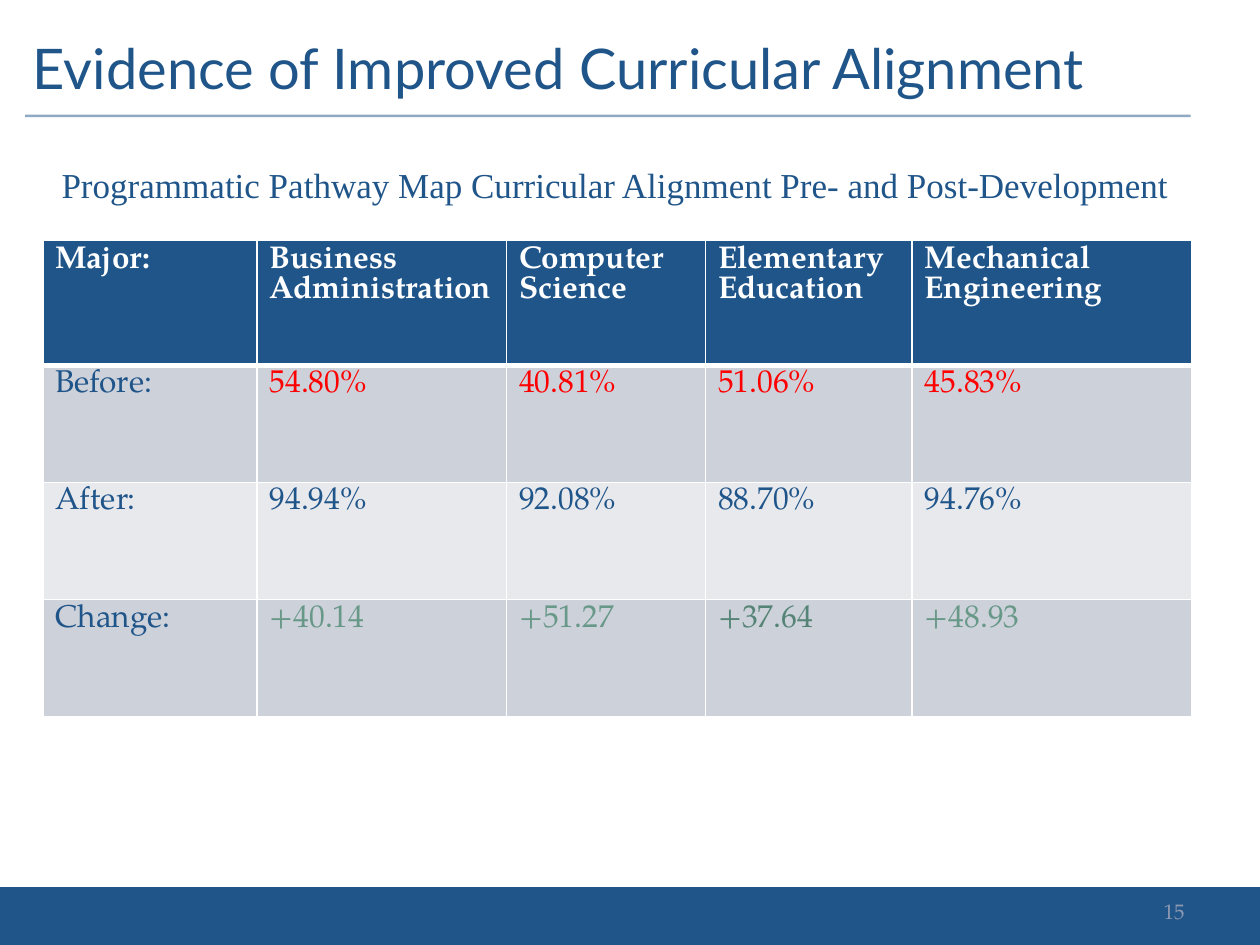
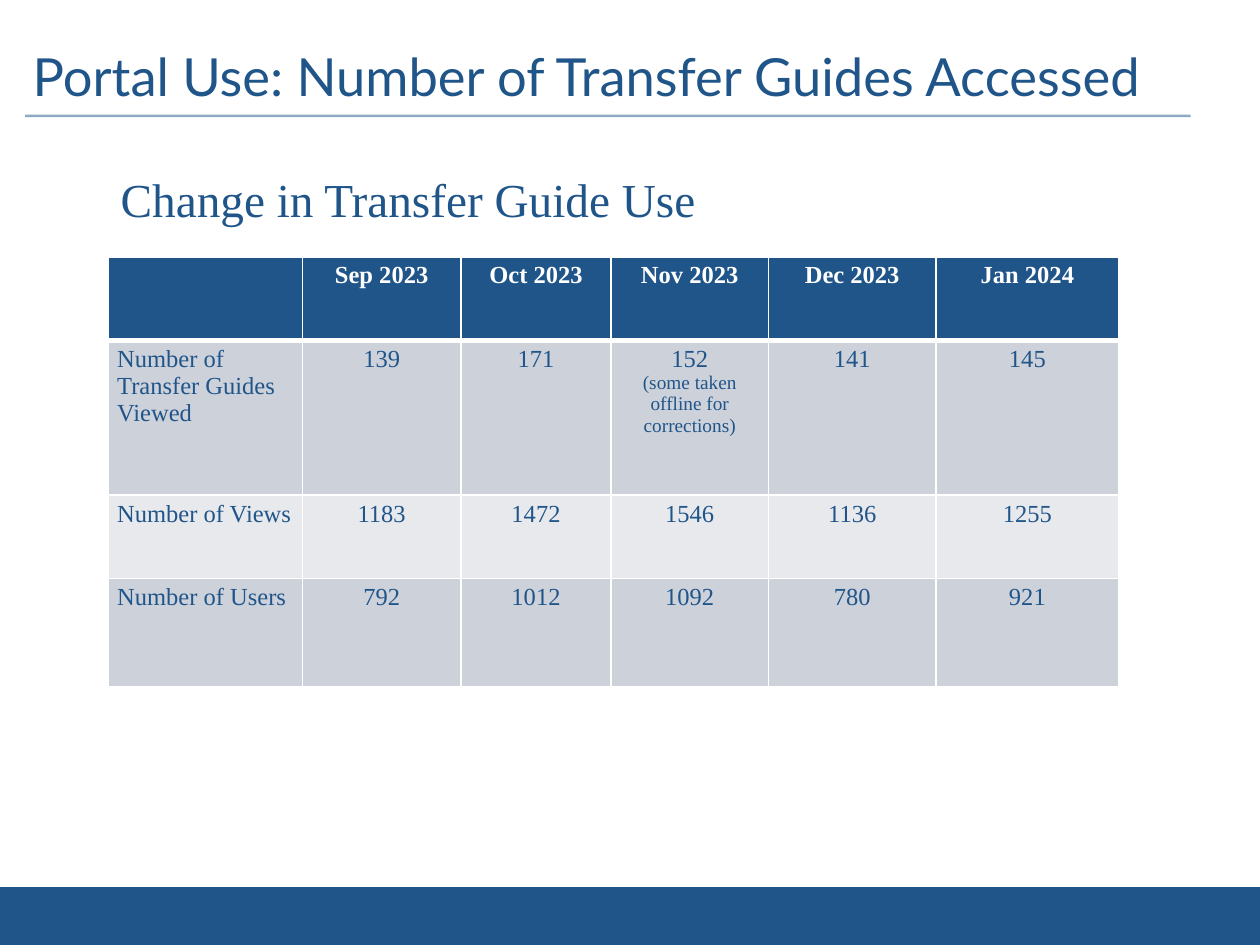
import dataclasses

import pptx
import pptx.dml.color
import pptx.enum.shapes
import pptx.enum.text
import pptx.oxml
import pptx.oxml.ns
import pptx.util

ALIGN = pptx.enum.text.PP_ALIGN
LEFT, MID, RIGHT = ALIGN.LEFT, ALIGN.CENTER, ALIGN.RIGHT

# Slide size and a grid of 100 columns by 75 rows
WIDE, HIGH = pptx.util.Inches(10), pptx.util.Inches(7.5)
COLS, ROWS = 100, 75

# Shared colours and fonts
NAVY, WHITE, GRAY = "20558A", "FFFFFF", "8D99B1"
RED, GREEN, PINE = "FF0000", "689888", "558476"
BANDS = ("CDD1DA", "E8E9ED")
SANS, BOOK, TIMES = "Lato", "TeX Gyre Pagella", "Times New Roman"

Box = tuple[float, float, float, float]
Spot = tuple[int, int]


@dataclasses.dataclass
class Style:
    font: str
    size: float
    hue: str = NAVY
    bold: bool = False
    align: ALIGN = LEFT


@dataclasses.dataclass
class Label:
    text: str
    box: Box
    style: Style


@dataclasses.dataclass
class Chart:
    """A banded table: texts, grid sizes and the cells that stand out."""
    left: float
    top: float
    wides: list[float]
    highs: list[float]
    cells: list[list[str]]
    font: str
    size: float
    align: ALIGN = LEFT
    inset: tuple[float, float] = (1, 0.5)
    pitch: float | None = None
    hues: dict[Spot, str] = dataclasses.field(default_factory=dict)
    notes: dict[Spot, str] = dataclasses.field(default_factory=dict)


@dataclasses.dataclass
class Page:
    title: Label
    lead: Label
    chart: Chart
    number: Label | None = None


def across(n: float) -> int:
    return round(WIDE * n / COLS)


def down(n: float) -> int:
    return round(HIGH * n / ROWS)


def place(box: Box) -> tuple[int, int, int, int]:
    return across(box[0]), down(box[1]), across(box[2]), down(box[3])


def color(code: str) -> pptx.dml.color.RGBColor:
    return pptx.dml.color.RGBColor.from_string(code)


def paint(shape, code: str) -> None:
    shape.fill.solid()
    shape.fill.fore_color.rgb = color(code)


def write(para, text: str, style: Style) -> None:
    para.alignment = style.align
    run = para.add_run()
    run.text = text
    run.font.name = style.font
    run.font.size = pptx.util.Pt(style.size)
    run.font.bold = style.bold
    run.font.color.rgb = color(style.hue)


# Slide parts
def frame(slide) -> None:
    """Bottom band and the rule under the title."""
    band = slide.shapes.add_shape(
        pptx.enum.shapes.MSO_SHAPE.RECTANGLE, *place((0, 70.4, COLS, 4.6)))
    band.shadow.inherit = False
    paint(band, NAVY)
    band.line.fill.background()

    rule = slide.shapes.add_connector(
        pptx.enum.shapes.MSO_CONNECTOR.STRAIGHT,
        across(2), down(9.2), across(94.5), down(9.2))
    rule.line.color.rgb = color(NAVY)
    rule.line.width = pptx.util.Pt(1.5)
    props = rule.element.spPr
    tint = next(props.iter(pptx.oxml.ns.qn("a:srgbClr")))
    tint.append(pptx.oxml.parse_xml(
        f'<a:alpha {pptx.oxml.ns.nsdecls("a")} val="50000"/>'))
    props.append(pptx.oxml.parse_xml(
        f'<a:effectLst {pptx.oxml.ns.nsdecls("a")}/>'))


def head(slide, label: Label) -> None:
    shape = slide.shapes.title
    shape.left, shape.top, shape.width, shape.height = place(label.box)
    fill(shape.text_frame, label, pptx.enum.text.MSO_ANCHOR.MIDDLE)


def note(slide, label: Label, anchor=pptx.enum.text.MSO_ANCHOR.TOP) -> None:
    shape = slide.shapes.add_textbox(*place(label.box))
    fill(shape.text_frame, label, anchor)


def fill(body, label: Label, anchor) -> None:
    body.word_wrap = True
    body.vertical_anchor = anchor
    write(body.paragraphs[0], label.text, label.style)


def edge(cell, top: float, base: float) -> None:
    """White borders, with top and base widths in points."""
    props = cell._tc.get_or_add_tcPr()
    sides = (("lnL", 1), ("lnR", 1), ("lnT", top), ("lnB", base))
    for i, (side, wide) in enumerate(sides):
        props.insert(i, pptx.oxml.parse_xml(
            f'<a:{side} {pptx.oxml.ns.nsdecls("a")} '
            f'w="{pptx.util.Pt(wide)}"><a:solidFill>'
            f'<a:srgbClr val="{WHITE}"/></a:solidFill></a:{side}>'))


def draw(slide, chart: Chart) -> None:
    box = chart.left, chart.top, sum(chart.wides), sum(chart.highs)
    table = slide.shapes.add_table(
        len(chart.highs), len(chart.wides), *place(box)).table
    table.first_row = table.horz_banding = False
    for col, wide in zip(table.columns, chart.wides):
        col.width = across(wide)
    for row, high in zip(table.rows, chart.highs):
        row.height = down(high)

    for r, texts in enumerate(chart.cells):
        for c, text in enumerate(texts):
            cell = table.cell(r, c)
            cell.margin_left = cell.margin_right = across(chart.inset[0])
            cell.margin_top = cell.margin_bottom = down(chart.inset[1])
            paint(cell, BANDS[(r - 1) % 2] if r else NAVY)
            edge(cell, 3 if r == 1 else 1, 1 if r else 3)
            hue = chart.hues.get((r, c), NAVY if r else WHITE)
            style = Style(chart.font, chart.size, hue, r == 0,
                          chart.align if c else LEFT)
            lines = [(line, style) for line in text.split("\n") if line]
            if (r, c) in chart.notes:
                small = dataclasses.replace(style, size=11)
                lines.append((chart.notes[r, c], small))
            body = cell.text_frame
            for i, (line, look) in enumerate(lines):
                para = body.add_paragraph() if i else body.paragraphs[0]
                if chart.pitch:
                    para.line_spacing = pptx.util.Pt(chart.pitch)
                write(para, line, look)


# Slide contents
MAJORS = Chart(
    3.4, 19.1, [17, 19.8, 15.8, 16.4, 22.2], [9.9, 9.3, 9.3, 9.3],
    [["Major:", "Business Administration", "Computer Science",
      "Elementary\nEducation", "Mechanical\nEngineering"],
     ["Before:", "54.80%", "40.81%", "51.06%", "45.83%"],
     ["After:", "94.94%", "92.08%", "88.70%", "94.76%"],
     ["Change:", "+40.14", "+51.27", "+37.64", "+48.93"]],
    BOOK, 18, pitch=17.1,
    hues={(1, c): RED for c in range(1, 5)}
    | {(3, c): PINE if c == 3 else GREEN for c in range(1, 5)})

GUIDES = Chart(
    8.6, 20.4, [15.4, 12.6, 11.9, 12.5, 13.3, 14.5], [6.6, 12.3, 6.6, 8.6],
    [["", "Sep 2023", "Oct 2023", "Nov 2023", "Dec 2023", "Jan 2024"],
     ["Number of Transfer Guides Viewed", "139", "171", "152", "141", "145"],
     ["Number of Views", "1183", "1472", "1546", "1136", "1255"],
     ["Number of Users", "792", "1012", "1092", "780", "921"]],
    TIMES, 14, MID, (0.7, 0.4),
    notes={(1, 3): "(some taken offline for corrections)"})

PAGES = [
    Page(Label("Evidence of Improved Curricular Alignment",
               (1.6, 0.9, 90.7, 8.9), Style(SANS, 32)),
         Label("Programmatic Pathway Map Curricular Alignment "
               "Pre- and Post-Development",
               (3.9, 12.5, 90.7, 4.4), Style(TIMES, 20)),
         MAJORS,
         Label("15", (71.7, 70.3, 23.3, 4),
               Style(BOOK, 12, GRAY, align=RIGHT))),
    Page(Label("Portal Use: Number of Transfer Guides Accessed",
               (1.6, 0.9, 90.7, 10.2), Style(SANS, 30)),
         Label("Change in Transfer Guide Use",
               (8.6, 13, 81.3, 5.6), Style(TIMES, 27)),
         GUIDES),
]


def main() -> None:
    deck = pptx.Presentation()
    deck.slide_width, deck.slide_height = WIDE, HIGH
    plan = deck.slide_layouts.get_by_name("Title Only")
    for page in PAGES:
        slide = deck.slides.add_slide(plan)
        frame(slide)
        head(slide, page.title)
        draw(slide, page.chart)
        note(slide, page.lead)
        if page.number:
            note(slide, page.number, pptx.enum.text.MSO_ANCHOR.MIDDLE)
    deck.save("out.pptx")


if __name__ == "__main__":
    main()
